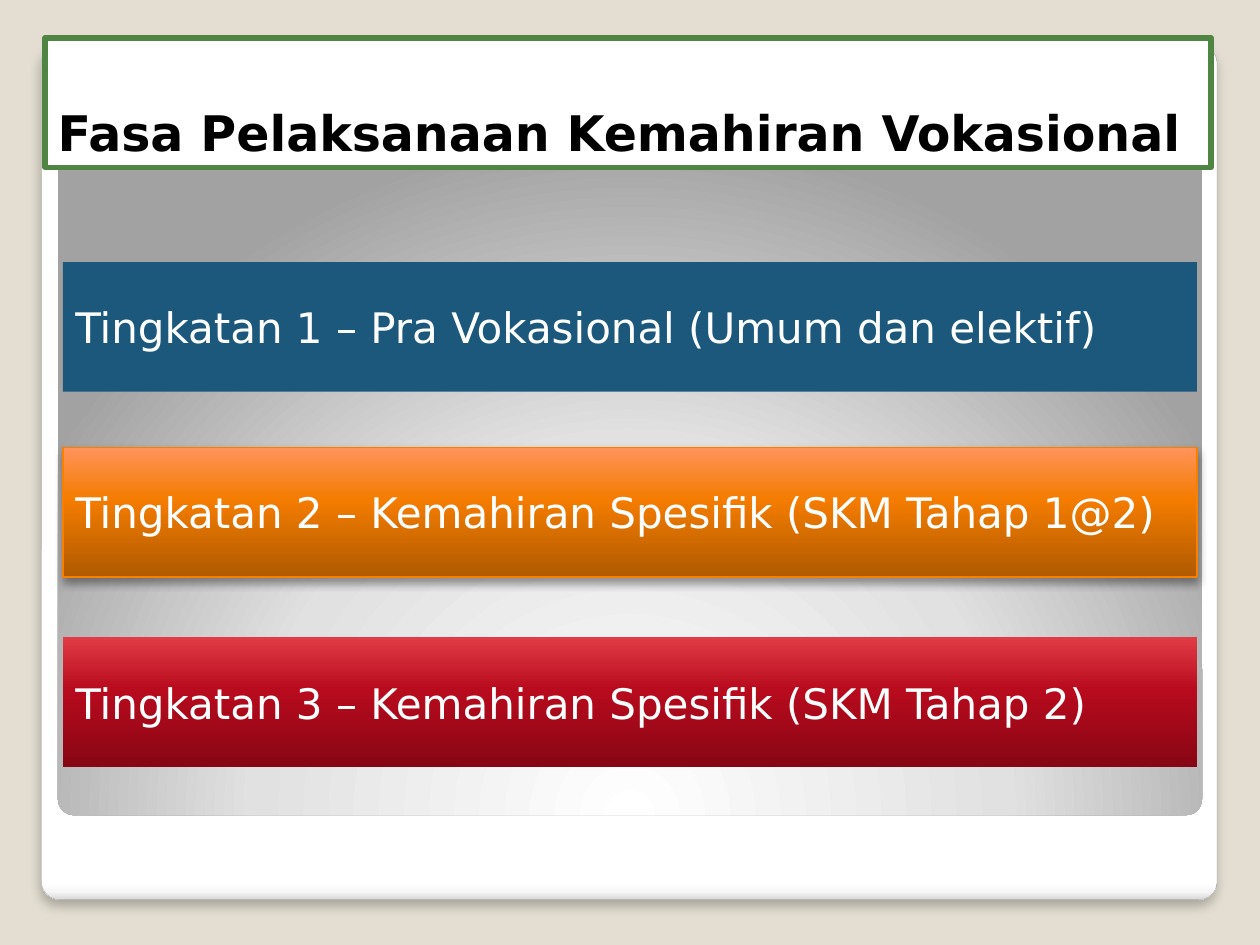
"""Builds a slide with the three phases of vocational skills training."""
from pptx import Presentation
from pptx import util as u
from pptx.dml.color import RGBColor
from pptx.enum import shapes, text
from pptx.oxml import parse_xml
from pptx.oxml.ns import nsdecls

FONT = "DejaVu Sans"
BLACK = RGBColor(0x00, 0x00, 0x00)
WHITE = RGBColor(0xFF, 0xFF, 0xFF)
SAND = RGBColor(0xE3, 0xDE, 0xD1)
GREY = RGBColor(0xA4, 0xA4, 0xA4)
GREEN = RGBColor(0x4E, 0x85, 0x42)
BLUE = RGBColor(0x1B, 0x58, 0x7C)
ORANGE = RGBColor(0xF9, 0x7F, 0x00)

LINEAR = '<a:lin ang="{}" scaled="0"/>'
DOWN, UP = LINEAR.format(90 * 60000), LINEAR.format(270 * 60000)
GLOW = ('<a:path path="circle"><a:fillToRect l="50000" t="175000" '
        'r="50000" b="-75000"/></a:path>')

CARD_STOPS = [(0, "FFFFFF"), (98, "FFFFFF"), (99, "F7F7F7"), (100, "DADADA")]
PANEL_STOPS = [(0, "FFFFFF"), (55, "E1E1E1"), (100, "A2A2A2")]
ORANGE_STOPS = [(0, "B05A00"), (60, "F47C00"), (100, "FF945C")]
RED_STOPS = [(0, "870614"), (60, "B80B1E"), (100, "E13C45")]

PHASES = [
    (2.08, "Tingkatan 1 – Pra Vokasional (Umum dan elektif)",
     {"color": BLUE}),
    (3.55, "Tingkatan 2 – Kemahiran Spesifik (SKM Tahap 1@2)",
     {"stops": ORANGE_STOPS, "direction": UP, "line": (ORANGE, 0.75),
      "shadow": (40, 5.2, 3)}),
    (5.06, "Tingkatan 3 – Kemahiran Spesifik (SKM Tahap 2)",
     {"stops": RED_STOPS, "direction": UP}),
]


def set_gradient(shape, stops, direction):
    """Fill a shape with colour stops given in percent."""
    shape.fill.gradient()
    marks = "".join(
        f'<a:gs pos="{place * 1000}"><a:srgbClr val="{color}"/></a:gs>'
        for place, color in stops)
    fill = parse_xml(f'<a:gradFill {nsdecls("a")} rotWithShape="1">'
                     f'<a:gsLst>{marks}</a:gsLst>{direction}</a:gradFill>')
    properties = shape._element.spPr
    properties.replace(properties.find(fill.tag), fill)


def set_shadow(shape, opacity, blur, distance):
    """Drop a black shadow straight down from a shape."""
    effects = shape._element.spPr.find(
        "{http://schemas.openxmlformats.org/drawingml/2006/main}effectLst")
    effects.append(parse_xml(
        f'<a:outerShdw {nsdecls("a")} blurRad="{u.Pt(blur)}" '
        f'dist="{u.Pt(distance)}" dir="5400000" algn="t" rotWithShape="0">'
        f'<a:srgbClr val="000000"><a:alpha val="{opacity * 1000}"/>'
        '</a:srgbClr></a:outerShdw>'))


def add_box(page, place, color=None, stops=None, direction=DOWN,
            line=None, shadow=None, radius=None):
    """Add a rectangle, rounded when a radius is given."""
    kind = shapes.MSO_SHAPE.ROUNDED_RECTANGLE if radius else shapes.MSO_SHAPE.RECTANGLE
    box = page.shapes.add_shape(kind, *map(u.Inches, place))
    box.shadow.inherit = False
    if radius:
        box.adjustments[0] = radius
    if stops:
        set_gradient(box, stops, direction)
    else:
        box.fill.solid()
        box.fill.fore_color.rgb = color
    if line:
        box.line.color.rgb = line[0]
        box.line.width = u.Pt(line[1])
    else:
        box.line.fill.background()
    if shadow:
        set_shadow(box, *shadow)
    return box


def write(box, words, color, align, anchor, **formats):
    """Write one paragraph into a box."""
    frame = box.text_frame
    frame.word_wrap = True
    frame.vertical_anchor = anchor
    para = frame.paragraphs[0]
    para.alignment = align
    span = para.add_run()
    span.text = words
    span.font.color.rgb = color
    for name, value in {"name": FONT, **formats}.items():
        setattr(span.font, name, value)


def main():
    """Build and save the deck."""
    deck = Presentation()
    deck.slide_width, deck.slide_height = u.Inches(10), u.Inches(7.5)
    page = deck.slides.add_slide(deck.slide_layouts[6])
    page.background.fill.solid()
    page.background.fill.fore_color.rgb = SAND

    add_box(page, (0.33, 0.36, 9.33, 6.78), stops=CARD_STOPS,
            line=(GREY, 0.16), shadow=(25, 6, 4), radius=0.021)
    add_box(page, (0.46, 0.47, 9.08, 6), stops=PANEL_STOPS,
            direction=GLOW, radius=0.021)

    title = add_box(page, (0.36, 0.3, 9.25, 1.03), WHITE, line=(GREEN, 3.35))
    write(title, "Fasa Pelaksanaan Kemahiran Vokasional", BLACK,
          text.PP_ALIGN.JUSTIFY, text.MSO_ANCHOR.BOTTOM,
          size=u.Pt(28), bold=True)

    for top, words, style in PHASES:
        bar = add_box(page, (0.5, top, 9, 1.03), **style)
        write(bar, words, WHITE, text.PP_ALIGN.LEFT, text.MSO_ANCHOR.MIDDLE,
              size=u.Pt(24))

    deck.save("out.pptx")


if __name__ == "__main__":
    main()
